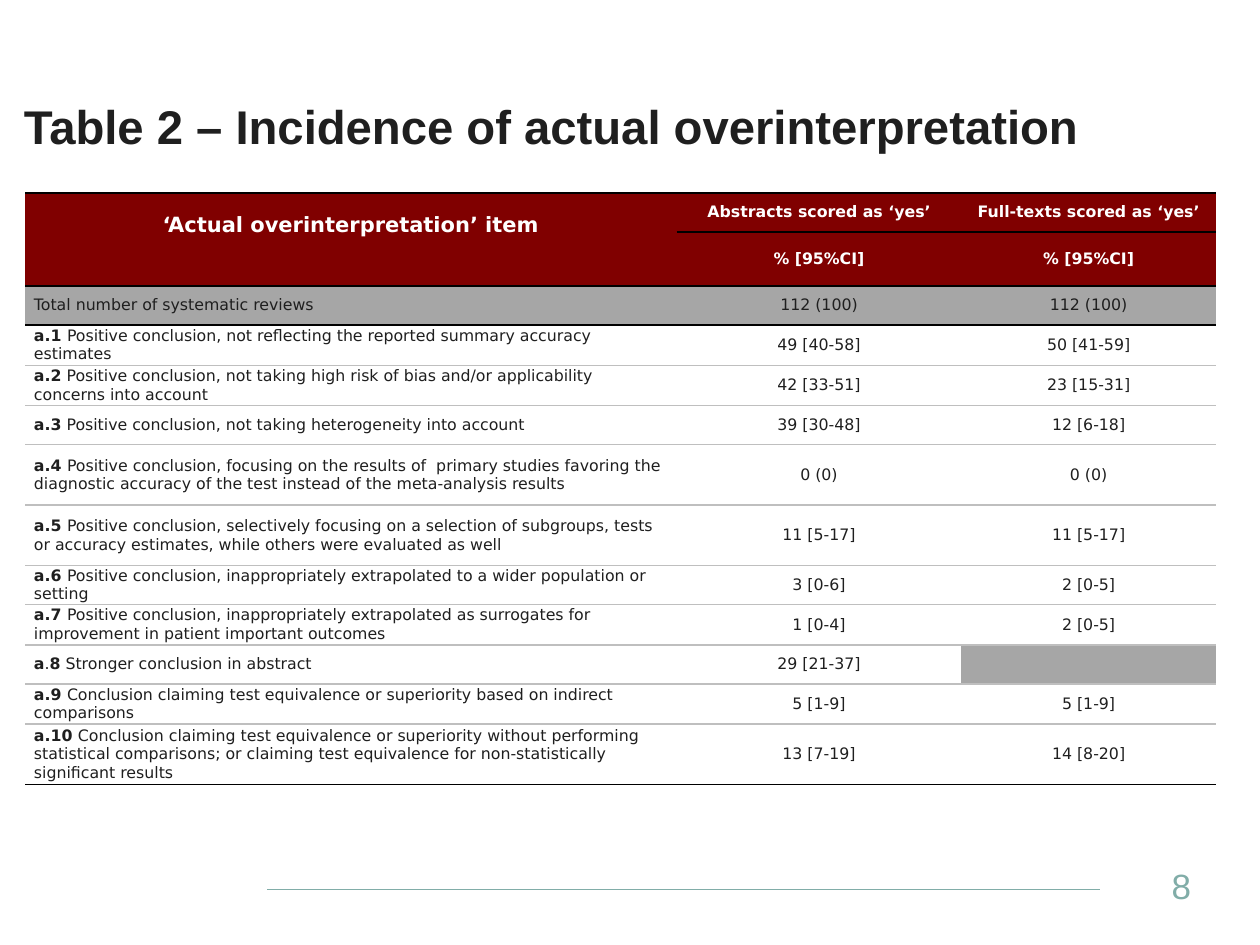
from lxml import etree
from pptx import Presentation
from pptx import util as u
from pptx.dml.color import RGBColor
from pptx.enum import shapes, text
from pptx.oxml.ns import qn

BLACK, WHITE, INK = "000000", "FFFFFF", "1F1F1F"
MAROON, GREY, RULE, TEAL = "800000", "A6A6A6", "BFBFBF", "81ADA8"
COLUMN_WIDTHS = (5.17, 2.26, 2.02)
HEADER_ROWS = 2
HEADER_SIZE, BODY_SIZE = 12, 9
ROWS = [
    (0.31, "|‘Actual overinterpretation’ item", "Abstracts scored as ‘yes’", "Full-texts scored as ‘yes’"),
    (0.43, "", "% [95%CI]", "% [95%CI]"),
    (0.31, "|Total number of systematic reviews", "112 (100)", "112 (100)"),
    (0.32, "a.1 |Positive conclusion, not reflecting the reported summary accuracy estimates",
     "49 [40-58]", "50 [41-59]"),
    (0.32, "a.2| Positive conclusion, not taking high risk of bias and/or applicability concerns into account",
     "42 [33-51]", "23 [15-31]"),
    (0.31, "a.3| Positive conclusion, not taking heterogeneity into account", "39 [30-48]", "12 [6-18]"),
    (0.48, "a.4 |Positive conclusion, focusing on the results of  primary studies favoring the "
     "diagnostic accuracy of the test instead of the meta-analysis results", "0 (0)", "0 (0)"),
    (0.48, "a.5 |Positive conclusion, selectively focusing on a selection of subgroups, tests "
     "or accuracy estimates, while others were evaluated as well", "11 [5-17]", "11 [5-17]"),
    (0.31, "a.6 |Positive conclusion, inappropriately extrapolated to a wider population or setting",
     "3 [0-6]", "2 [0-5]"),
    (0.32, "a.7 |Positive conclusion, inappropriately extrapolated as surrogates for "
     "improvement in patient important outcomes", "1 [0-4]", "2 [0-5]"),
    (0.31, "a|.|8| Stronger conclusion in abstract", "29 [21-37]", ""),
    (0.32, "a.9 |Conclusion claiming test equivalence or superiority based on indirect comparisons",
     "5 [1-9]", "5 [1-9]"),
    (0.48, "a.10 |Conclusion claiming test equivalence or superiority without performing "
     "statistical comparisons; or claiming test equivalence for non-statistically significant results",
     "13 [7-19]", "14 [8-20]"),
]


def rgb(value):
    """Turn a hex string into a colour."""
    return RGBColor.from_string(value)


def set_font(font, name, size, color, bold=False):
    """Set the face, size, colour and weight of a font."""
    font.name, font.size, font.bold = name, u.Pt(size), bold
    font.color.rgb = rgb(color)


def set_borders(cell, top, bottom):
    """Draw one-point rules above and below a cell, with open sides."""
    properties = cell._tc.get_or_add_tcPr()
    edges = (("a:lnL", None), ("a:lnR", None), ("a:lnT", top), ("a:lnB", bottom))
    for index, (tag, color) in enumerate(edges):
        line = etree.Element(qn(tag), w=str(u.Pt(1)))
        properties.insert(index, line)
        if color:
            fill = etree.SubElement(line, qn("a:solidFill"))
            etree.SubElement(fill, qn("a:srgbClr"), val=color)
        else:
            etree.SubElement(line, qn("a:noFill"))


def rule_color(boundary):
    """Give the colour of the rule above the row with this index."""
    return BLACK if boundary <= HEADER_ROWS + 1 or boundary == len(ROWS) else RULE


def fill_cell(cell, content, row, column):
    """Write and format one table cell."""
    header = row < HEADER_ROWS
    cell.margin_left = cell.margin_right = u.Inches(0.07)
    cell.margin_top = cell.margin_bottom = 0
    cell.vertical_anchor = text.MSO_ANCHOR.MIDDLE
    if header:
        cell.fill.solid()
        cell.fill.fore_color.rgb = rgb(MAROON)
    elif row == HEADER_ROWS or not content:
        cell.fill.solid()
        cell.fill.fore_color.rgb = rgb(GREY)
    else:
        cell.fill.background()
    paragraph = cell.text_frame.paragraphs[0]
    if header or column:
        paragraph.alignment = text.PP_ALIGN.CENTER
    size = HEADER_SIZE if header and column == 0 else BODY_SIZE
    set_font(paragraph.font, "DejaVu Sans", size, WHITE if header else INK, header)
    segments = content.split("|") if column == 0 else ["", content]
    for index, segment in enumerate(segments):
        if segment:
            run = paragraph.add_run()
            run.text = segment
            set_font(run.font, "DejaVu Sans", size, WHITE if header else INK,
                     header or index % 2 == 0)
    set_borders(cell, rule_color(row), rule_color(row + 1))


def add_results_table(slide, left, top, width, height):
    """Add the table of overinterpretation items."""
    frame = slide.shapes.add_table(len(ROWS), len(COLUMN_WIDTHS), u.Inches(left),
                                   u.Inches(top), u.Inches(width), u.Inches(height))
    table = frame.table
    table.horz_banding = table.first_row = False
    for column, column_width in zip(table.columns, COLUMN_WIDTHS):
        column.width = u.Inches(column_width)
    for row, (row_height, *contents) in enumerate(ROWS):
        table.rows[row].height = u.Inches(row_height)
        for column, content in enumerate(contents):
            fill_cell(table.cell(row, column), content, row, column)
    item_header = table.cell(0, 0)
    item_header.merge(table.cell(HEADER_ROWS - 1, 0))
    item_header.margin_bottom = u.Inches(0.23)


def place_title(slide, left, top, width, height):
    """Move and format the title placeholder."""
    title = slide.shapes.title
    title.left, title.top = u.Inches(left), u.Inches(top)
    title.width, title.height = u.Inches(width), u.Inches(height)
    frame = title.text_frame
    frame.text = "Table 2 – Incidence of actual overinterpretation"
    frame.vertical_anchor = text.MSO_ANCHOR.TOP
    paragraph = frame.paragraphs[0]
    paragraph.alignment = text.PP_ALIGN.LEFT
    set_font(paragraph.font, "Arial", 27, INK, True)


def add_footer(slide, left, top, width, height):
    """Add the footer rule and the slide number."""
    middle = u.Inches(top + 0.23)
    line = slide.shapes.add_connector(shapes.MSO_CONNECTOR.STRAIGHT, u.Inches(left), middle,
                                      u.Inches(left + 6.61), middle)
    line.line.color.rgb = rgb(TEAL)
    line.line.width = u.Pt(0.5)
    etree.SubElement(line._element.spPr, qn("a:effectLst"))
    number_width = 0.8
    number = slide.shapes.add_textbox(u.Inches(left + width - number_width), u.Inches(top),
                                      u.Inches(number_width), u.Inches(height))
    frame = number.text_frame
    frame.word_wrap = True
    frame.vertical_anchor = text.MSO_ANCHOR.MIDDLE
    frame.text = "8"
    set_font(frame.paragraphs[0].font, "Arial", 20, TEAL)


def main():
    """Build the slide and save it."""
    presentation = Presentation()
    presentation.slide_width, presentation.slide_height = u.Inches(10), u.Inches(7.5)
    slide = presentation.slides.add_slide(presentation.slide_layouts.get_by_name("Title Only"))
    place_title(slide, 0.09, 0.72, 8.89, 0.82)
    add_results_table(slide, 0.2, 1.53, 9.45, 4.7)
    add_footer(slide, 2.12, 6.83, 7.88, 0.4)
    presentation.save("out.pptx")


if __name__ == "__main__":
    main()
